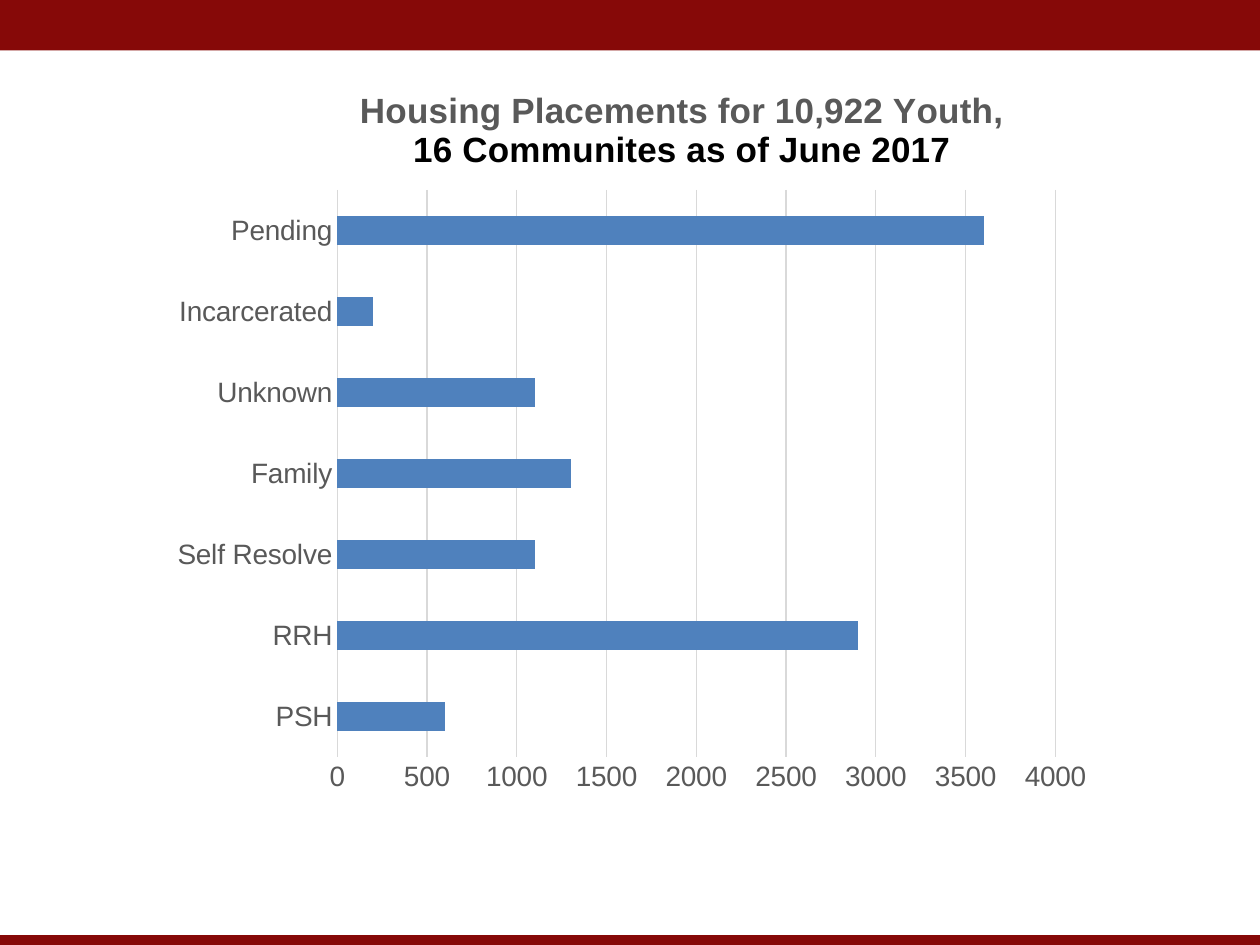
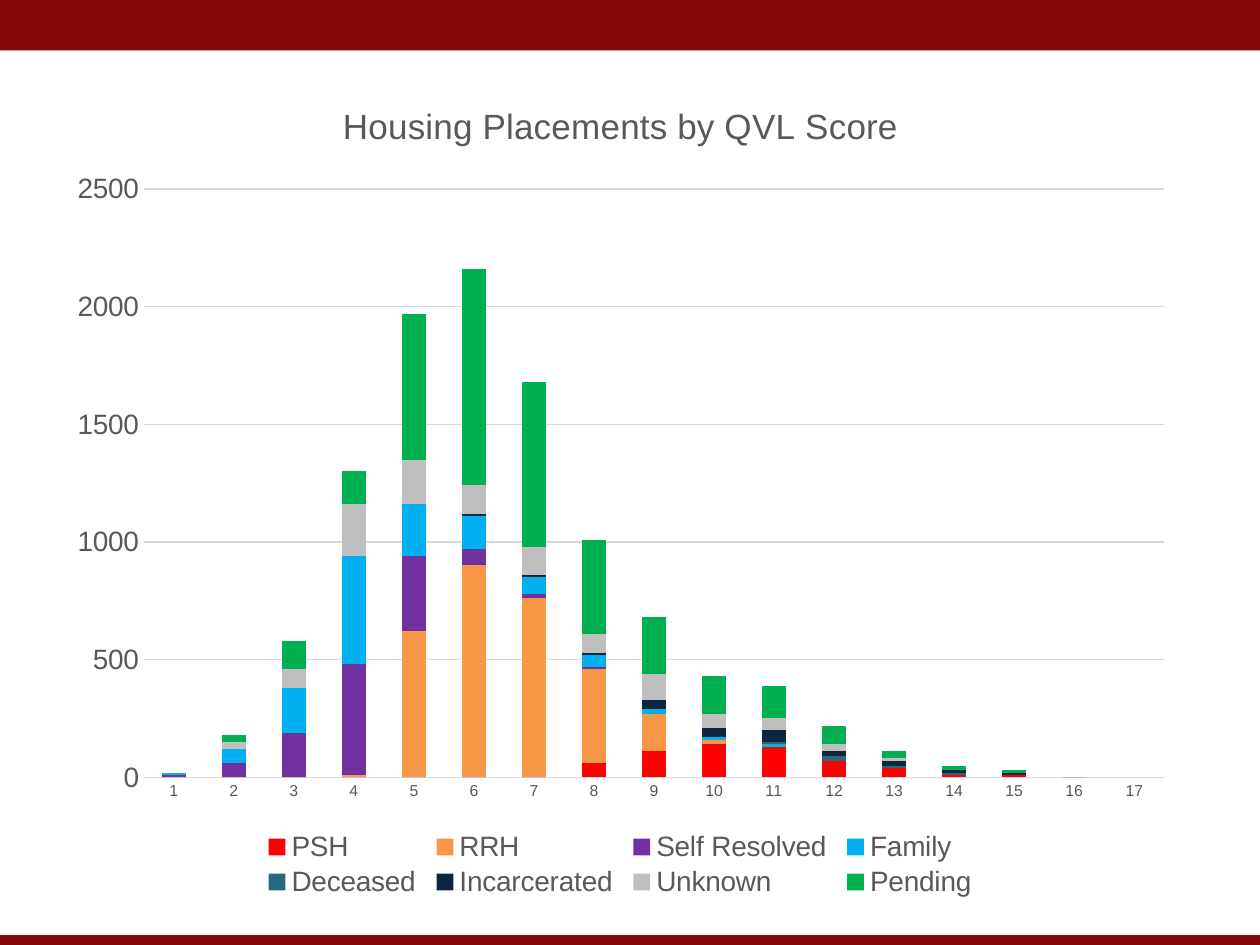
from lxml import etree
from pptx import Presentation
from pptx.chart.data import CategoryChartData
from pptx.dml.color import RGBColor
from pptx.enum.chart import XL_CHART_TYPE, XL_LEGEND_POSITION, XL_TICK_MARK
from pptx.enum.shapes import MSO_SHAPE
from pptx.oxml.ns import qn
from pptx.util import Cm, Pt

RECTANGLE = MSO_SHAPE.RECTANGLE
BARS = XL_CHART_TYPE.BAR_CLUSTERED
STACKED_COLUMNS = XL_CHART_TYPE.COLUMN_STACKED
LEGEND_BOTTOM = XL_LEGEND_POSITION.BOTTOM
NO_TICKS = XL_TICK_MARK.NONE

MAROON = RGBColor(0x86, 0x09, 0x08)
BLACK = RGBColor(0x00, 0x00, 0x00)
GREY_TEXT = RGBColor(0x59, 0x59, 0x59)
GRID_GREY = RGBColor(0xD9, 0xD9, 0xD9)
BLUE = RGBColor(0x4F, 0x81, 0xBD)
RED = RGBColor(0xFF, 0x00, 0x00)
ORANGE = RGBColor(0xF7, 0x96, 0x46)
PURPLE = RGBColor(0x70, 0x30, 0xA0)
SKY = RGBColor(0x00, 0xB0, 0xF0)
TEAL = RGBColor(0x27, 0x6A, 0x7C)
NAVY = RGBColor(0x0F, 0x24, 0x3E)
SILVER = RGBColor(0xBF, 0xBF, 0xBF)
GREEN = RGBColor(0x00, 0xB0, 0x50)
FONT = "Arial"

# Top and bottom bands shared by all slides: (top, height) in cm
BANDS = [(0, 1.02), (18.85, 0.2)]

# Content: one entry per slide; layouts are fractions of the chart area
placements = {
    "kind": BARS,
    "box": (3.18, 1.27, 19.05, 15.04),
    "title": [("Housing Placements for 10,922 Youth,", GREY_TEXT),
              ("16 Communites as of June 2017", BLACK)],
    "title_bold": True,
    "title_at": {"x": 0.21, "y": 0.03},
    "plot_at": {"x": 0.19, "y": 0.17, "w": 0.76, "h": 0.76},
    "legend_at": None,
    "gap": 182, "overlap": 0, "maximum": 4000, "category_size": 16,
    "categories": ["PSH", "RRH", "Self Resolve", "Family", "Unknown",
                   "Incarcerated", "Pending"],
    "series": [("Series 1", BLUE, [600, 2900, 1100, 1300, 1100, 200, 3600])],
}
scores = {
    "kind": STACKED_COLUMNS,
    "box": (1.07, 1.47, 22.86, 16.71),
    "title": [("Housing Placements by QVL Score", GREY_TEXT)],
    "title_bold": False,
    "title_at": {"x": 0.25, "y": 0.03},
    "plot_at": {"x": 0.08, "y": 0.14, "w": 0.9, "h": 0.71},
    "legend_at": {"x": 0.18, "y": 0.91, "w": 0.64, "h": 0.09},
    "gap": 150, "overlap": 100, "maximum": 2500, "category_size": 9,
    "categories": [str(score) for score in range(1, 18)],
    "series": [
        ("PSH", RED, [0] * 7 + [60, 110, 140, 130, 70, 40, 10, 10]),
        ("RRH", ORANGE,
         [None, None, 0, 10, 620, 900, 760, 400, 160, 20, 0, 0]),
        ("Self Resolved", PURPLE,
         [10, 60, 190, 470, 320, 70, 20, 10, None, 0]),
        ("Family", SKY,
         [10, 60, 190, 460, 220, 140, 70, 50, 20, 10, 10, 0]),
        ("Deceased", TEAL, [None] * 5 + [0] * 5 + [10, 20, 10, 10, 0, 0]),
        ("Incarcerated", NAVY,
         [None] * 5 + [10, 10, 10, 40, 40, 50, 20, 20, 10, 10]),
        ("Unknown", SILVER,
         [0, 30, 80, 220, 190, 120, 120, 80, 110, 60, 50, 30, 10, 0, 0]),
        ("Pending", GREEN,
         [0, 30, 120, 140, 620, 920, 700, 400, 240, 160, 140, 80, 30, 20,
          10, 0]),
    ],
}


def style_font(font, size, color=GREY_TEXT, bold=False):
    settings = {"name": FONT, "size": Pt(size), "bold": bold}
    for attribute, value in settings.items():
        setattr(font, attribute, value)
    font.color.rgb = color


def set_layout(part, index, fractions):
    """Place a chart part by hand; index is where its layout element belongs."""
    for old in part.findall(qn("c:layout")):
        part.remove(old)
    layout = etree.Element(qn("c:layout"))
    manual = etree.SubElement(layout, qn("c:manualLayout"))
    if part.tag == qn("c:plotArea"):
        etree.SubElement(manual, qn("c:layoutTarget"), val="inner")
    for axis in ("x", "y"):
        etree.SubElement(manual, qn(f"c:{axis}Mode"), val="edge")
    for side, fraction in fractions.items():
        etree.SubElement(manual, qn(f"c:{side}"), val=str(fraction))
    part.insert(index, layout)


prs = Presentation()
prs.slide_width, prs.slide_height = Cm(25.4), Cm(19.05)
blank_layout = prs.slide_layouts[6]

for content in (placements, scores):
    slide = prs.slides.add_slide(blank_layout)

    # Bands
    for top, height in BANDS:
        band = slide.shapes.add_shape(
            RECTANGLE, 0, Cm(top), prs.slide_width, Cm(height))
        band.shadow.inherit = False
        band.fill.solid()
        band.fill.fore_color.rgb = MAROON
        band.line.fill.background()

    # Chart data, with empty cells after the last known value
    categories = content["categories"]
    data = CategoryChartData()
    data.categories = categories
    for name, color, values in content["series"]:
        data.add_series(name, values + [None] * (len(categories) - len(values)))
    box = [Cm(length) for length in content["box"]]
    chart = slide.shapes.add_chart(content["kind"], *box, data).chart
    style_font(chart.font, 10, BLACK)

    # Bars
    plot = chart.plots[0]
    plot.vary_by_categories = False
    plot.gap_width = content["gap"]
    plot.overlap = content["overlap"]
    for series, (name, color, values) in zip(plot.series, content["series"]):
        series.format.fill.solid()
        series.format.fill.fore_color.rgb = color
        series.invert_if_negative = False

    # Chart title
    chart.has_title = True
    title_frame = chart.chart_title.text_frame
    for number, (text, color) in enumerate(content["title"]):
        line = title_frame.add_paragraph() if number else title_frame.paragraphs[0]
        run = line.add_run()
        run.text = text
        style_font(run.font, 20, color, content["title_bold"])

    # Axes
    category_axis, value_axis = chart.category_axis, chart.value_axis
    for axis, size in ((category_axis, content["category_size"]), (value_axis, 16)):
        axis.major_tick_mark = axis.minor_tick_mark = NO_TICKS
        style_font(axis.tick_labels.font, size)
    value_axis.has_major_gridlines = True
    for rule in (category_axis.format.line, value_axis.major_gridlines.format.line):
        rule.color.rgb = GRID_GREY
        rule.width = Pt(0.75)
    value_axis.format.line.fill.background()
    value_axis.minimum_scale = 0
    value_axis.maximum_scale = content["maximum"]
    value_axis.major_unit = 500

    # Legend and placement of the chart parts
    chart_xml = chart.element.find(qn("c:chart"))
    set_layout(chart_xml.find(qn("c:title")), 1, content["title_at"])
    set_layout(chart_xml.find(qn("c:plotArea")), 0, content["plot_at"])
    chart.has_legend = content["legend_at"] is not None
    if chart.has_legend:
        chart.legend.position = LEGEND_BOTTOM
        chart.legend.include_in_layout = False
        style_font(chart.legend.font, 16)
        set_layout(chart_xml.find(qn("c:legend")), 1, content["legend_at"])

prs.save("out.pptx")
